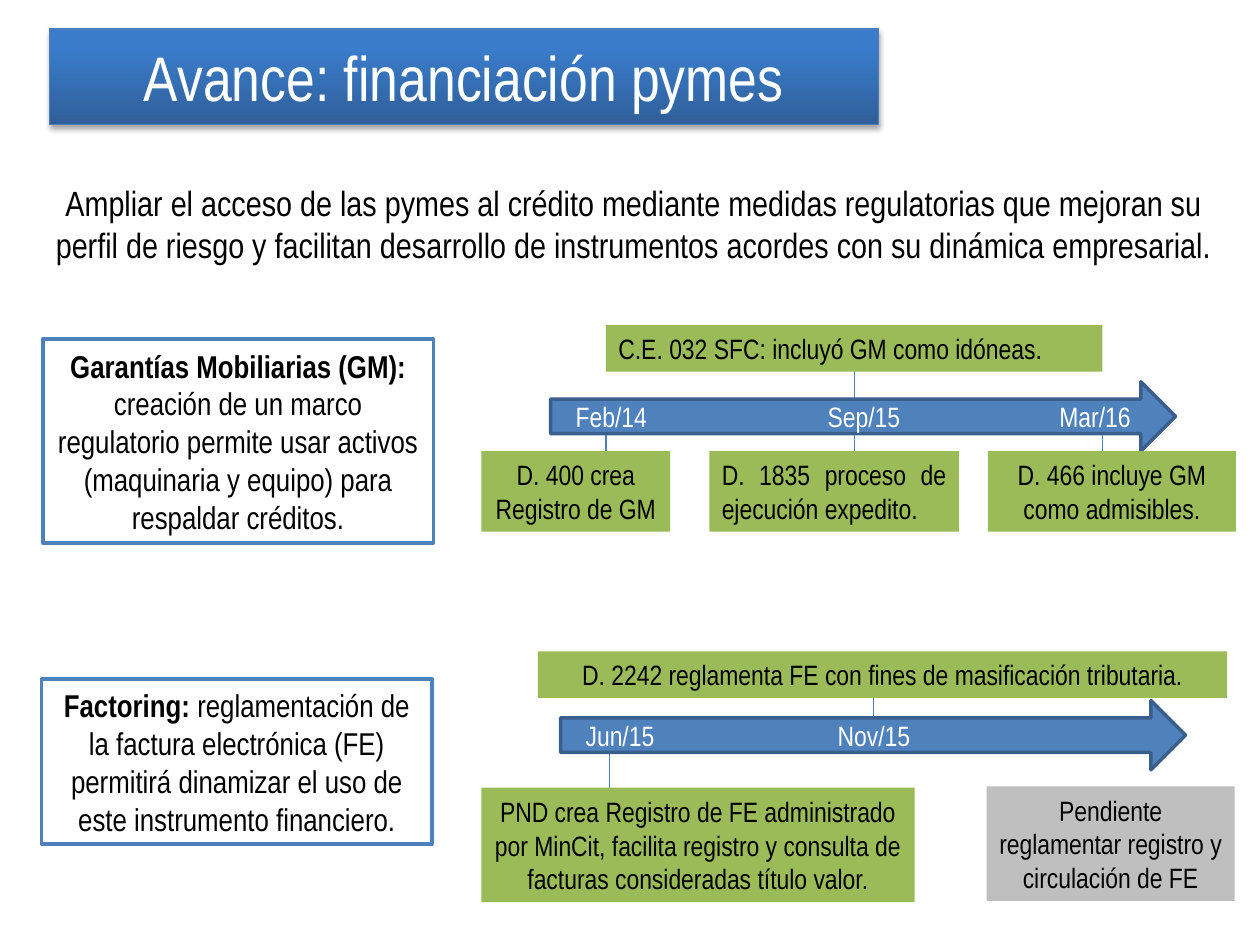
from lxml import etree
from pptx import Presentation
from pptx.dml.color import RGBColor
from pptx.enum.shapes import MSO_CONNECTOR, MSO_SHAPE
from pptx.enum.text import MSO_ANCHOR, MSO_AUTO_SIZE, PP_ALIGN
from pptx.oxml import parse_xml
from pptx.oxml.ns import nsdecls, qn
from pptx.util import Inches, Pt

RECT, ARROW = MSO_SHAPE.RECTANGLE, MSO_SHAPE.RIGHT_ARROW
LINE = MSO_CONNECTOR.STRAIGHT
LEFT, MID, FULL = PP_ALIGN.LEFT, PP_ALIGN.CENTER, PP_ALIGN.JUSTIFY
CENTRE, GROW = MSO_ANCHOR.MIDDLE, MSO_AUTO_SIZE.SHAPE_TO_FIT_TEXT
FONT = "Arial Narrow"
TABS = (2, 3.84)
COLORS = {
    "white": "FFFFFF", "black": "000000", "blue": "4F81BD", "edge": "3A5F8C",
    "link": "4B7EBC", "green": "9BBB59", "gray": "BFBFBF",
    "dark": "2F5F99", "light": "3A7CCB",
}


def color(name):
    """Return the named colour."""
    return RGBColor.from_string(COLORS[name])


def style(run, size, ink="black", bold=False):
    """Format one run of text."""
    font = run.font
    font.name, font.size, font.bold = FONT, Pt(size), bold
    font.color.rgb = color(ink)


def add_form(slide, kind, at, fill, edge=None, width=2):
    """Add a preset shape with a plain fill and an optional outline."""
    form = slide.shapes.add_shape(kind, *map(Inches, at))
    form.shadow.inherit = False
    form.fill.solid()
    form.fill.fore_color.rgb = color(fill)
    if edge:
        form.line.color.rgb = color(edge)
        form.line.width = Pt(width)
    else:
        form.line.fill.background()
    return form


def write(form, text, size, align=MID, ink="black", lead=""):
    """Write one paragraph, with an optional bold lead."""
    frame = form.text_frame
    frame.word_wrap, frame.auto_size = True, GROW
    para = frame.paragraphs[0]
    para.alignment = align
    para.text = lead or text
    if lead:
        para.add_run().text = text
    for run in para.runs:
        style(run, size, ink)
    para.runs[0].font.bold = bool(lead)
    return para


def add_title(slide, text):
    """Add the title bar with its gradient and soft shadow."""
    bar = add_form(slide, RECT, (0.39, 0.23, 6.58, 0.76), "blue", "link", 0.75)
    bar.fill.gradient()
    bar.fill.gradient_angle = 90
    for stop, name, place in zip(bar.fill.gradient_stops, ("dark", "light"), (0, 0.8)):
        stop.color.rgb, stop.position = color(name), place
    write(bar, text, 36, ink="white")
    bar.text_frame.auto_size = MSO_AUTO_SIZE.NONE
    bar.text_frame.vertical_anchor = CENTRE
    bar._element.spPr.find(qn("a:effectLst")).append(parse_xml(
        f'<a:outerShdw {nsdecls("a")} blurRad="40000" dist="23000" dir="5400000" '
        'rotWithShape="0"><a:srgbClr val="000000"><a:alpha val="35000"/>'
        '</a:srgbClr></a:outerShdw>'))


def add_link(slide, x, start, end):
    """Add an upright arrow from start to end."""
    link = slide.shapes.add_connector(LINE, *map(Inches, (x, start, x, end)))
    link.line.color.rgb = color("link")
    link.line.width = Pt(0.75)
    etree.SubElement(link.line._get_or_add_ln(), qn("a:tailEnd"), type="arrow")
    etree.SubElement(link._element.spPr, qn("a:effectLst"))


def add_time(slide, left, top, dates):
    """Add a block arrow with dates set on tab stops."""
    add_form(slide, ARROW, (left, top, 4.96, 0.55), "blue", "edge")
    at = (left + 0.1, top + 0.09, 4.63, 0.37)
    box = slide.shapes.add_textbox(*map(Inches, at))
    para = box.text_frame.paragraphs[0]
    stops = etree.SubElement(para._p.get_or_add_pPr(), qn("a:tabLst"))
    for pos in TABS:
        etree.SubElement(stops, qn("a:tab"), pos=str(Inches(pos)), algn="l")
    write(box, "\t".join(dates), 16, LEFT, "white")


def main():
    """Build the slide and save it."""
    deck = Presentation()
    deck.slide_width, deck.slide_height = Inches(10), Inches(7.5)
    slide = deck.slides.add_slide(deck.slide_layouts[6])

    links = [
        (4.84, 6.32, 5.81), (6.93, 5.84, 5.33), (8.75, 3.58, 3.24),
        (4.81, 3.64, 3.3), (6.78, 3.82, 2.81),
    ]
    for link in links:
        add_link(slide, *link)

    add_title(slide, "Avance: financiación pymes")
    aim = slide.shapes.add_textbox(*map(Inches, (0.33, 1.39, 9.4, 0.77)))
    write(aim, "Ampliar el acceso de las pymes al crédito mediante medidas "
          "regulatorias que mejoran su perfil de riesgo y facilitan desarrollo de "
          "instrumentos acordes con su dinámica empresarial.", 20)

    topics = [
        ((0.34, 2.69, 3.1, 1.62), "Garantías Mobiliarias (GM): ",
         "creación de un marco regulatorio permite usar activos "
         "(maquinaria y equipo) para respaldar créditos."),
        ((0.33, 5.39, 3.1, 1.31), "Factoring: ",
         "reglamentación de la factura electrónica (FE) permitirá "
         "dinamizar el uso de este instrumento financiero."),
    ]
    for at, lead, text in topics:
        write(add_form(slide, RECT, at, "white", "blue"), text, 18, lead=lead)

    add_time(slide, 4.37, 3.03, ("Feb/14", "Sep/15", "Mar/16"))
    add_time(slide, 4.45, 5.56, ("Jun/15", "Nov/15"))

    steps = [
        ((3.82, 3.58, 1.5, 0.64), "green", MID, "D. 400 crea Registro de GM"),
        ((5.63, 3.58, 1.98, 0.64), "green", FULL,
         "D. 1835 proceso de ejecución expedito."),
        ((7.84, 3.58, 1.97, 0.64), "green", MID,
         "D. 466 incluye GM como admisibles."),
        ((4.81, 2.58, 3.94, 0.37), "green", FULL,
         "C.E. 032 SFC: incluyó GM como idóneas."),
        ((4.27, 5.17, 5.47, 0.37), "green", MID,
         "D. 2242 reglamenta FE con fines de masificación tributaria."),
        ((3.82, 6.25, 3.44, 0.91), "green", MID,
         "PND crea Registro de FE administrado por MinCit, facilita registro "
         "y consulta de facturas consideradas título valor."),
        ((7.83, 6.24, 1.97, 0.91), "gray", MID,
         "Pendiente reglamentar registro y circulación de FE"),
    ]
    for at, fill, align, text in steps:
        write(add_form(slide, RECT, at, fill), text, 16, align)

    deck.save("out.pptx")


if __name__ == "__main__":
    main()
